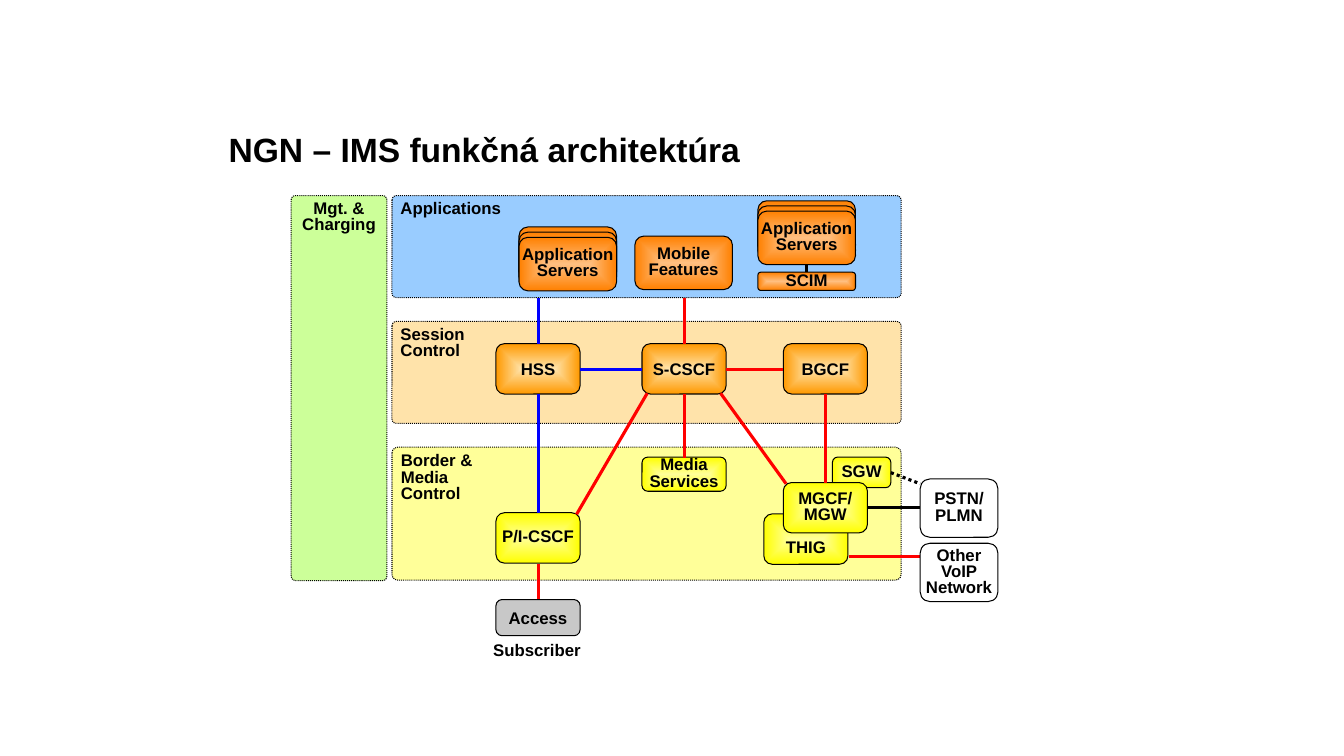
from lxml import etree
from pptx import Presentation
from pptx.dml.color import RGBColor
from pptx.enum.dml import MSO_LINE
from pptx.enum.shapes import MSO_CONNECTOR, MSO_SHAPE
from pptx.enum.text import MSO_ANCHOR, MSO_AUTO_SIZE, PP_ALIGN
from pptx.oxml.ns import qn
from pptx.util import Cm, Pt

ROUND = MSO_SHAPE.ROUNDED_RECTANGLE
STRAIGHT = MSO_CONNECTOR.STRAIGHT
DOTS = MSO_LINE.ROUND_DOT
TOP, MID, LOW = MSO_ANCHOR.TOP, MSO_ANCHOR.MIDDLE, MSO_ANCHOR.BOTTOM
LEFT, CENTER = PP_ALIGN.LEFT, PP_ALIGN.CENTER
FIXED = MSO_AUTO_SIZE.NONE

BLACK = RGBColor(0, 0, 0)
WHITE = RGBColor(255, 255, 255)
GREY = RGBColor(0xC8, 0xC8, 0xC8)
RED = RGBColor(255, 0, 0)
BLUE = RGBColor(0, 0, 255)
GREEN = RGBColor(0xCC, 0xFF, 0x99)
SKY = RGBColor(0x99, 0xCC, 0xFF)
SAND = RGBColor(0xFF, 0xE3, 0xAA)
LEMON = RGBColor(0xFF, 0xFF, 0x99)
ORANGE = (RGBColor(0xFF, 0xBF, 0x80), RGBColor(0xFF, 0x80, 0))
AMBER = (SAND, RGBColor(0xFF, 0x99, 0))
YELLOW = (LEMON, RGBColor(255, 255, 0))

NODE = (2.12, 1.27)
APP = (2.46, 1.35)
PEER = (1.96, 1.47)
COLS = (2.62, 6.3, 9.86)


def write(shape, text, size=12, align=CENTER, anchor=MID, gap=0.8, inset=(0, 0.13, 0, 0.13)):
    """Fill a shape with bold text, one paragraph per line."""
    frame = shape.text_frame
    frame.word_wrap = True
    frame.auto_size = FIXED
    frame.vertical_anchor = anchor
    left, top, right, low = map(Cm, inset)
    frame.margin_left, frame.margin_top = left, top
    frame.margin_right, frame.margin_bottom = right, low
    for i, line in enumerate(text.split("\n")):
        para = frame.add_paragraph() if i else frame.paragraphs[0]
        para.alignment = align
        para.line_spacing = gap
        run = para.add_run()
        run.text = line
        font = run.font
        font.name, font.size, font.bold = "Arial", Pt(size), True
        font.color.rgb = BLACK


def glow(fill, tones):
    """Shade a fill from its centre to its edge."""
    fill.gradient()
    for stop, tone, place in zip(fill.gradient_stops, tones, (0, 1)):
        stop.color.rgb = tone
        stop.position = place


def center(shape):
    """Turn the linear shade of a shape into one that follows its outline."""
    grad = shape.element.spPr.find(qn("a:gradFill"))
    for old in grad.findall(qn("a:lin")):
        grad.remove(old)
    way = etree.SubElement(grad, qn("a:path"), path="shape")
    etree.SubElement(way, qn("a:fillToRect"), l="50000", t="50000", r="50000", b="50000")


def block(slide, box, paint, round=0.167):
    """Draw a rounded block with a plain or shaded fill."""
    shape = slide.shapes.add_shape(ROUND, *map(Cm, box))
    shape.shadow.inherit = False
    shape.adjustments[0] = round
    shape.line.color.rgb = BLACK
    shape.line.width = Pt(0.75)
    if isinstance(paint, RGBColor):
        shape.fill.solid()
        shape.fill.fore_color.rgb = paint
    else:
        glow(shape.fill, paint)
        center(shape)
    return shape


def node(slide, box, place, size, text, paint, **style):
    """Place a labelled block relative to a region box."""
    spot = (box[0] + place[0], box[1] + place[1], *size)
    write(block(slide, spot, paint), text, **style)


def band(slide, box, text, paint, align=LEFT, inset=(0.18, 0.13, 10.16, 0)):
    """Draw the dotted background of a region with its name."""
    shape = block(slide, box, paint, 0.043)
    shape.line.dash_style = DOTS
    write(shape, text, align=align, anchor=TOP, inset=inset)


def link(slide, box, start, end, paint, dash=None):
    """Join two points given relative to a box."""
    x, y = box[:2]
    ends = (x + start[0], y + start[1], x + end[0], y + end[1])
    wire = slide.shapes.add_connector(STRAIGHT, *map(Cm, ends))
    wire.line.color.rgb = paint
    wire.line.width = Pt(2.25)
    if dash:
        wire.line.dash_style = dash
    etree.SubElement(wire.element.spPr, qn("a:effectLst"))


def head(slide, box):
    """Set the title of the slide."""
    title = slide.shapes.title
    title.left, title.top, title.width, title.height = map(Cm, box)
    write(title, "NGN – IMS funkčná architektúra", 24, LEFT, gap=1, inset=(1.52, 0.13, 0.25, 0.13))


def stack(slide, box, place):
    """Draw a pile of three application servers."""
    x, y = box[0] + place[0], box[1] + place[1]
    for i in range(2):
        block(slide, (x, y + 0.13 * i, *APP), ORANGE)
    node(slide, (x, y), (0, 0.26), APP, "Application Servers", ORANGE)


def apps(slide, box):
    """Draw the applications region."""
    band(slide, box, "Applications", SKY, inset=(0.18, 0.13, 5, 0))
    stack(slide, box, (3.2, 0.79))
    node(slide, box, (6.12, 1.02), APP, "Mobile Features", ORANGE)
    stack(slide, box, (9.22, 0.13))
    node(slide, box, (9.22, 1.93), (APP[0], 0.46), "SCIM", ORANGE)
    link(slide, box, (10.45, 1.73), (10.45, 1.93), BLACK)


def control(slide, box):
    """Draw the session control region."""
    band(slide, box, "Session Control", SAND)
    for x, text in zip(COLS, ("HSS", "S-CSCF", "BGCF")):
        node(slide, box, (x, 0.56), NODE, text, AMBER, gap=1)


def border(slide, box):
    """Draw the border and media control region."""
    band(slide, box, "Border & Media Control", LEMON)
    node(slide, box, (11.1, 0.25), (1.47, 0.77), "SGW", YELLOW)
    node(slide, box, (COLS[1], 0.25), (NODE[0], 0.86), "Media Services", YELLOW)
    node(slide, box, (COLS[0], 1.65), NODE, "P/I-CSCF", YELLOW)
    node(slide, box, (9.37, 1.68), NODE, "THIG", YELLOW, anchor=LOW)
    node(slide, box, (COLS[2], 0.89), NODE, "MGCF/\nMGW", YELLOW)


def links(slide, box):
    """Draw the links between the regions."""
    home, core, gate = (x + NODE[0] / 2 for x in COLS)
    for x, top, low, paint in (
        (home, 2.57, 3.73, BLUE),
        (home, 5, 8, BLUE),
        (home, 9.27, 10.18, RED),
        (core, 2.57, 3.73, RED),
        (core, 5, 6.6, RED),
        (gate, 5, 7.24, RED),
    ):
        link(slide, box, (x, top), (x, low), paint)
    for i, paint in enumerate((BLUE, RED)):
        link(slide, box, (COLS[i] + NODE[0], 4.37), (COLS[i + 1], 4.37), paint)
    link(slide, box, (4.65, 8.03), (6.43, 4.98), RED)
    link(slide, box, (9.93, 7.26), (8.28, 4.98), RED)
    link(slide, box, (11.99, 7.85), (13.31, 7.85), BLACK)
    link(slide, box, (11.51, 9.09), (14.45, 9.09), RED)
    link(slide, box, (12.57, 6.98), (13.31, 7.26), BLACK, DOTS)


def outer(slide, box):
    """Draw the networks and the subscriber around the regions."""
    node(slide, box, (13.31, 7.14), PEER, "PSTN/\nPLMN", WHITE)
    node(slide, box, (13.31, 8.76), PEER, "Other VoIP Network", WHITE)
    node(slide, box, (COLS[0], 10.18), (NODE[0], 0.91), "Access", GREY, gap=1)
    spot = (box[0] + 2.46, box[1] + 11.2, 2.39, 0.51)
    label = slide.shapes.add_textbox(*map(Cm, spot))
    write(label, "Subscriber", gap=1, inset=(0, 0, 0, 0))


def main():
    """Build and save the slide."""
    deck = Presentation()
    deck.slide_width, deck.slide_height = Cm(33.87), Cm(19.05)
    slide = deck.slides.add_slide(deck.slide_layouts[5])
    left, top, width, step = 9.88, 4.93, 12.83, 3.17
    head(slide, (4.24, 3.12, 24.21, 1.27))
    band(slide, (7.34, top, 2.41, 9.7), "Mgt. & Charging", GREEN, CENTER, (0, 0.13, 0, 0))
    for i, (draw, height) in enumerate(((apps, 2.57), (control, 2.57), (border, 3.35))):
        draw(slide, (left, top + step * i, width, height))
    links(slide, (left, top, width, 9.7))
    outer(slide, (left, top, width, 9.7))
    deck.save("out.pptx")


if __name__ == "__main__":
    main()
